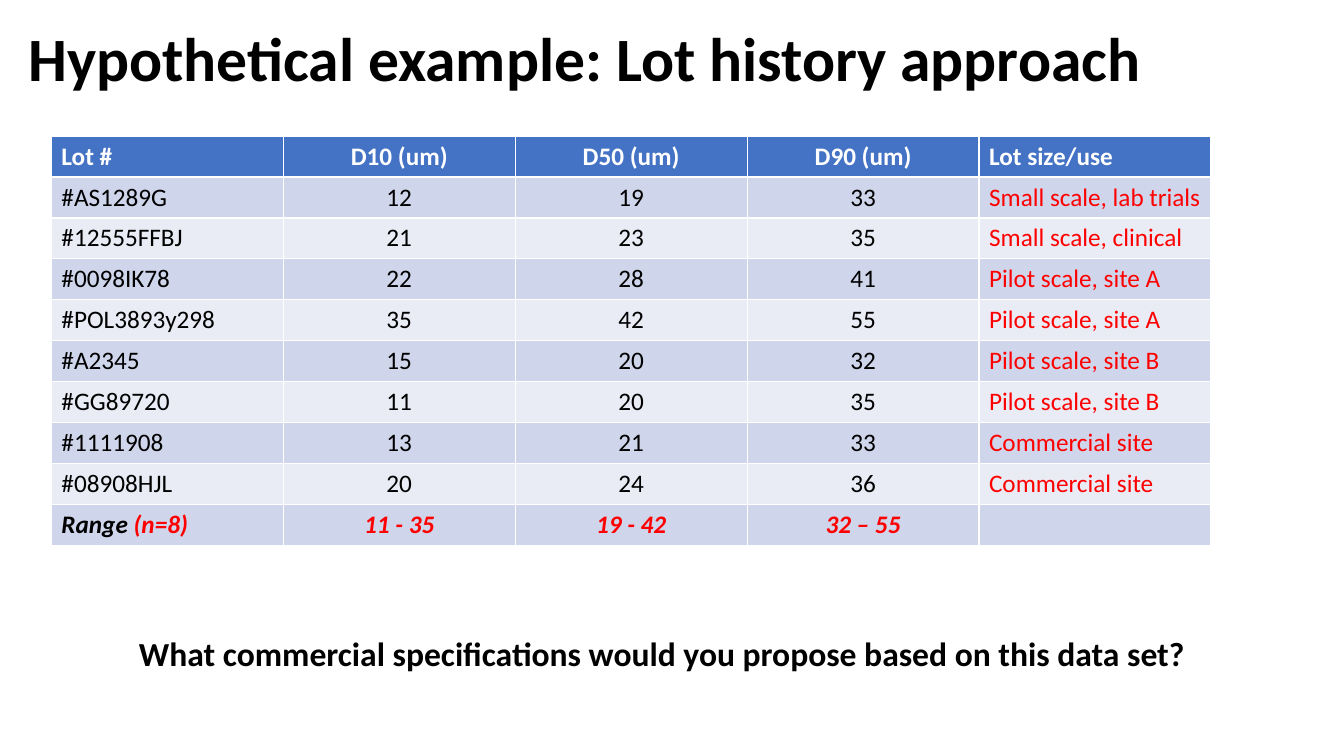
import pptx
import pptx.dml.color
import pptx.enum.text
import pptx.util

Inches = pptx.util.Inches
Align = pptx.enum.text.PP_ALIGN
Anchor = pptx.enum.text.MSO_ANCHOR
AutoSize = pptx.enum.text.MSO_AUTO_SIZE

BLACK, WHITE, RED = "000000", "FFFFFF", "FF0000"
HEADER_FILL, BANDS = "4472C4", ("CFD5EA", "E9EBF5")

HEADINGS = ["Lot #", "D10 (um)", "D50 (um)", "D90 (um)", "Lot size/use"]
LOTS = [
    ["#AS1289G", "12", "19", "33", "Small scale, lab trials"],
    ["#12555FFBJ", "21", "23", "35", "Small scale, clinical"],
    ["#0098IK78", "22", "28", "41", "Pilot scale, site A"],
    ["#POL3893y298", "35", "42", "55", "Pilot scale, site A"],
    ["#A2345", "15", "20", "32", "Pilot scale, site B"],
    ["#GG89720", "11", "20", "35", "Pilot scale, site B"],
    ["#1111908", "13", "21", "33", "Commercial site"],
    ["#08908HJL", "20", "24", "36", "Commercial site"],
]
RANGES = ["Range ", "11 - 35", "19 - 42", "32 – 55", ""]


def colour(value):
    return pptx.dml.color.RGBColor.from_string(value)


class LotHistoryPage:
    """Holds the font and the current slide, and adds styled elements to it."""

    font = "Calibri"

    def __init__(self, deck):
        self.page = deck.slides.add_slide(deck.slide_layouts[5])

    def style(self, para, size, tint=BLACK, bold=False, italic=False):
        for span in para.runs:
            span.font.name = self.font
            span.font.size = pptx.util.Pt(size)
            span.font.bold = bold
            span.font.italic = italic
            span.font.color.rgb = colour(tint)

    def title(self, text, left, top, width, height):
        box = self.page.shapes.title
        box.left, box.top = Inches(left), Inches(top)
        box.width, box.height = Inches(width), Inches(height)
        frame = box.text_frame
        frame.text = text
        frame.auto_size = AutoSize.NONE
        frame.vertical_anchor = Anchor.MIDDLE
        para = frame.paragraphs[0]
        para.alignment = Align.LEFT
        para.line_spacing = 0.9
        self.style(para, 44, bold=True)

    def question(self, text, left, top, width, height):
        box = self.page.shapes.add_textbox(
            Inches(left), Inches(top), Inches(width), Inches(height))
        frame = box.text_frame
        frame.text = text
        frame.word_wrap = False
        frame.auto_size = AutoSize.SHAPE_TO_FIT_TEXT
        self.style(frame.paragraphs[0], 24, bold=True)

    def table(self, rows, left, top, width, height):
        last_row, last_column = len(rows) - 1, len(rows[0]) - 1
        grid = self.page.shapes.add_table(
            len(rows), len(rows[0]), Inches(left), Inches(top),
            Inches(width), Inches(height)).table
        for row, texts in enumerate(rows):
            header, summary = row == 0, row == last_row
            for column, text in enumerate(texts):
                cell = grid.cell(row, column)
                cell.fill.solid()
                cell.fill.fore_color.rgb = colour(
                    HEADER_FILL if header else BANDS[(row - 1) % 2])
                cell.text_frame.text = text
                para = cell.text_frame.paragraphs[0]
                inner = 0 < column < last_column
                para.alignment = Align.CENTER if inner else Align.LEFT
                red = column == last_column or summary and column > 0
                tint = WHITE if header else RED if red else BLACK
                self.style(para, 18, tint, header or summary, summary)
        count_para = grid.cell(last_row, 0).text_frame.paragraphs[0]
        count_para.add_run().text = f"(n={len(LOTS)})"
        self.style(count_para, 18, RED, True, True)
        count_para.runs[0].font.color.rgb = colour(BLACK)


def main():
    deck = pptx.Presentation()
    deck.slide_width, deck.slide_height = Inches(13.33), Inches(7.5)
    page = LotHistoryPage(deck)
    page.title("Hypothetical example: Lot history approach",
               0.18, 0.13, 12.94, 0.96)
    page.table([HEADINGS, *LOTS, RANGES], 0.51, 1.35, 11.5, 4.06)
    page.question("What commercial specifications would you propose "
                  "based on this data set?", 1.28, 6.23, 10.68, 0.5)
    deck.save("out.pptx")


if __name__ == "__main__":
    main()
